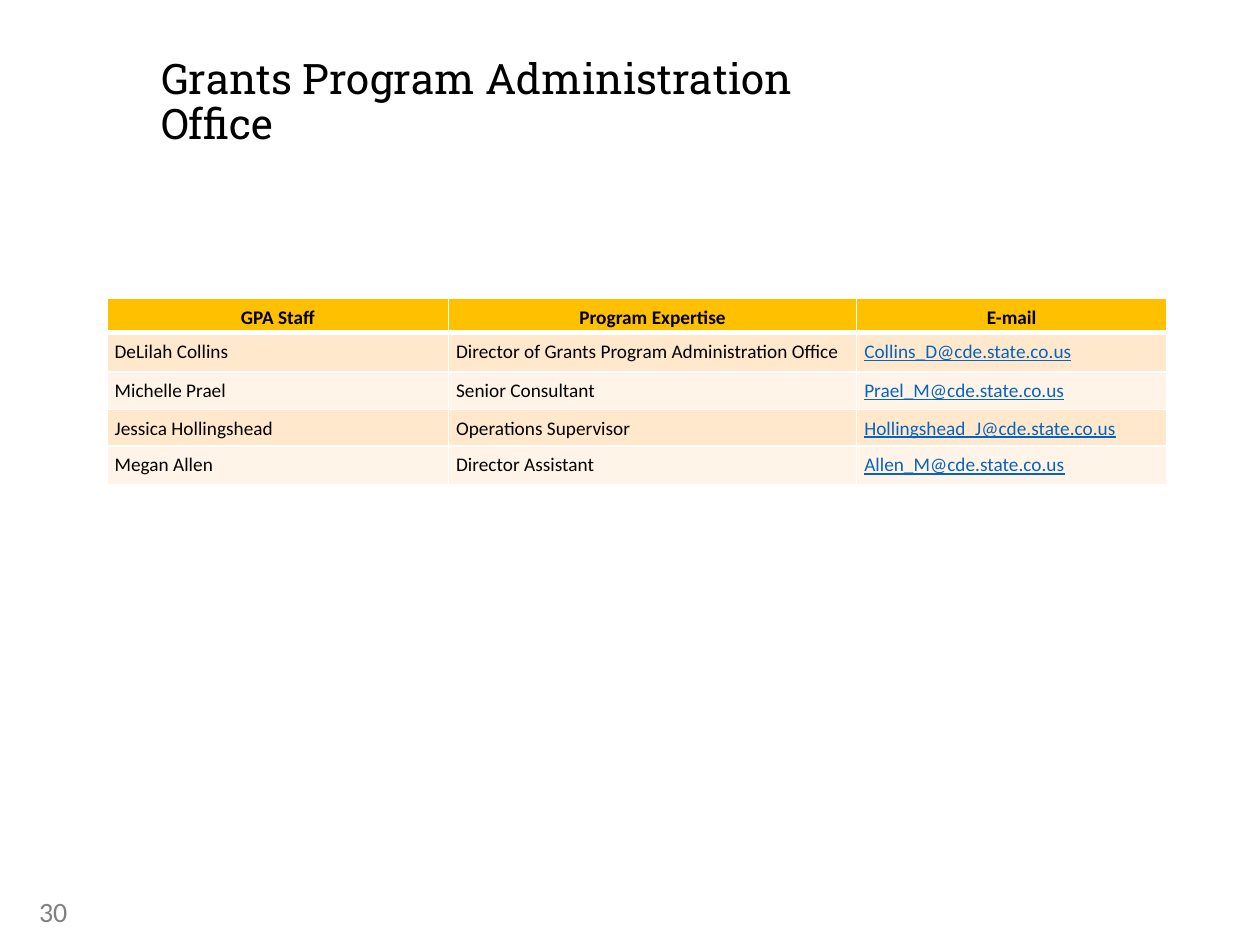
from lxml import etree
from pptx import Presentation
from pptx.dml.color import RGBColor
from pptx.enum.text import MSO_ANCHOR, PP_ALIGN
from pptx.oxml.ns import qn
from pptx.util import Inches, Pt

LEFT, CENTER = PP_ALIGN.LEFT, PP_ALIGN.CENTER
TOP, MIDDLE = MSO_ANCHOR.TOP, MSO_ANCHOR.MIDDLE
HEADER_FILL, BANDS = "FFC000", ("FFE8CC", "FFF4E7")
BLACK, GREY, LINK, WHITE = "000000", "808080", "0563C1", "FFFFFF"

COL_WIDTHS = (2.71, 3.24, 2.46)
ROW_HEIGHTS = (0.27, 0.31, 0.3, 0.29, 0.31)
STAFF = (
    ("GPA Staff", "Program Expertise", "E-mail"),
    ("DeLilah Collins", "Director of Grants Program Administration Office", "Collins_D@cde.state.co.us"),
    ("Michelle Prael", "Senior Consultant", "Prael_M@cde.state.co.us"),
    ("Jessica Hollingshead", "Operations Supervisor", "Hollingshead_J@cde.state.co.us"),
    ("Megan Allen", "Director Assistant", "Allen_M@cde.state.co.us"),
)


def rgb(value):
    return RGBColor.from_string(value)


class SlideBuilder:
    """Holds the text style and the current slide, and adds elements to it."""

    style = {"name": "Calibri", "bold": False, "underline": False}

    def __init__(self, slide):
        self.s = slide

    def add_line(self, tf, text, color, spacing=1.0, align=LEFT, **fmt):
        p = tf.paragraphs[0]
        p.alignment, p.line_spacing = align, spacing
        r = p.add_run()
        r.text = text
        for name, value in {**self.style, **fmt}.items():
            setattr(r.font, name, value)
        r.font.color.rgb = rgb(color)

    def margins(self, target, x, y):
        target.margin_left = target.margin_right = Inches(x)
        target.margin_top = target.margin_bottom = Inches(y)

    def text(self, box, text, color, inset=(0, 0), anchor=TOP, **fmt):
        tf = self.s.shapes.add_textbox(*map(Inches, box)).text_frame
        tf.word_wrap, tf.vertical_anchor = True, anchor
        self.margins(tf, *inset)
        self.add_line(tf, text, color, **fmt)

    def borders(self, cell, **widths):
        tcPr = cell._tc.get_or_add_tcPr()
        for side in "LRTB":
            ln = etree.SubElement(tcPr, qn(f"a:ln{side}"), w=str(Pt(widths.get(side, 1))))
            fill = etree.SubElement(ln, qn("a:solidFill"))
            etree.SubElement(fill, qn("a:srgbClr"), val=WHITE)

    def table(self, box, data, widths, heights):
        table = self.s.shapes.add_table(len(data), len(widths), *map(Inches, box)).table
        for col, width in zip(table.columns, widths):
            col.width = Inches(width)
        for row, height in zip(table.rows, heights):
            row.height = Inches(height)
        for i, values in enumerate(data):
            header = i == 0
            rules = {0: {"B": 3}, 1: {"T": 3}}.get(i, {})
            for j, value in enumerate(values):
                cell = table.cell(i, j)
                link = not header and j == len(values) - 1
                self.margins(cell, 0.06, 0.03)
                self.borders(cell, **rules)
                cell.fill.solid()
                cell.fill.fore_color.rgb = rgb(HEADER_FILL if header else BANDS[(i - 1) % 2])
                self.add_line(cell.text_frame, value, LINK if link else BLACK, 1.15,
                              CENTER if header else LEFT, size=Pt(11), bold=header, underline=link)


def main():
    prs = Presentation()
    prs.slide_width, prs.slide_height = Inches(10), Inches(7.5)
    page = SlideBuilder(prs.slides.add_slide(prs.slide_layouts[6]))
    page.text((1.28, 0.46, 5.64, 0.65), "Grants Program Administration Office", BLACK,
              spacing=0.9, name="Roboto Slab", size=Pt(24))
    page.text((0.24, 7.03, 2.25, 0.4), "30", GREY, (0.07, 0.04), MIDDLE, size=Pt(16))
    page.table((0.85, 2.37, sum(COL_WIDTHS), sum(ROW_HEIGHTS)), STAFF, COL_WIDTHS, ROW_HEIGHTS)
    prs.save("out.pptx")


if __name__ == "__main__":
    main()
